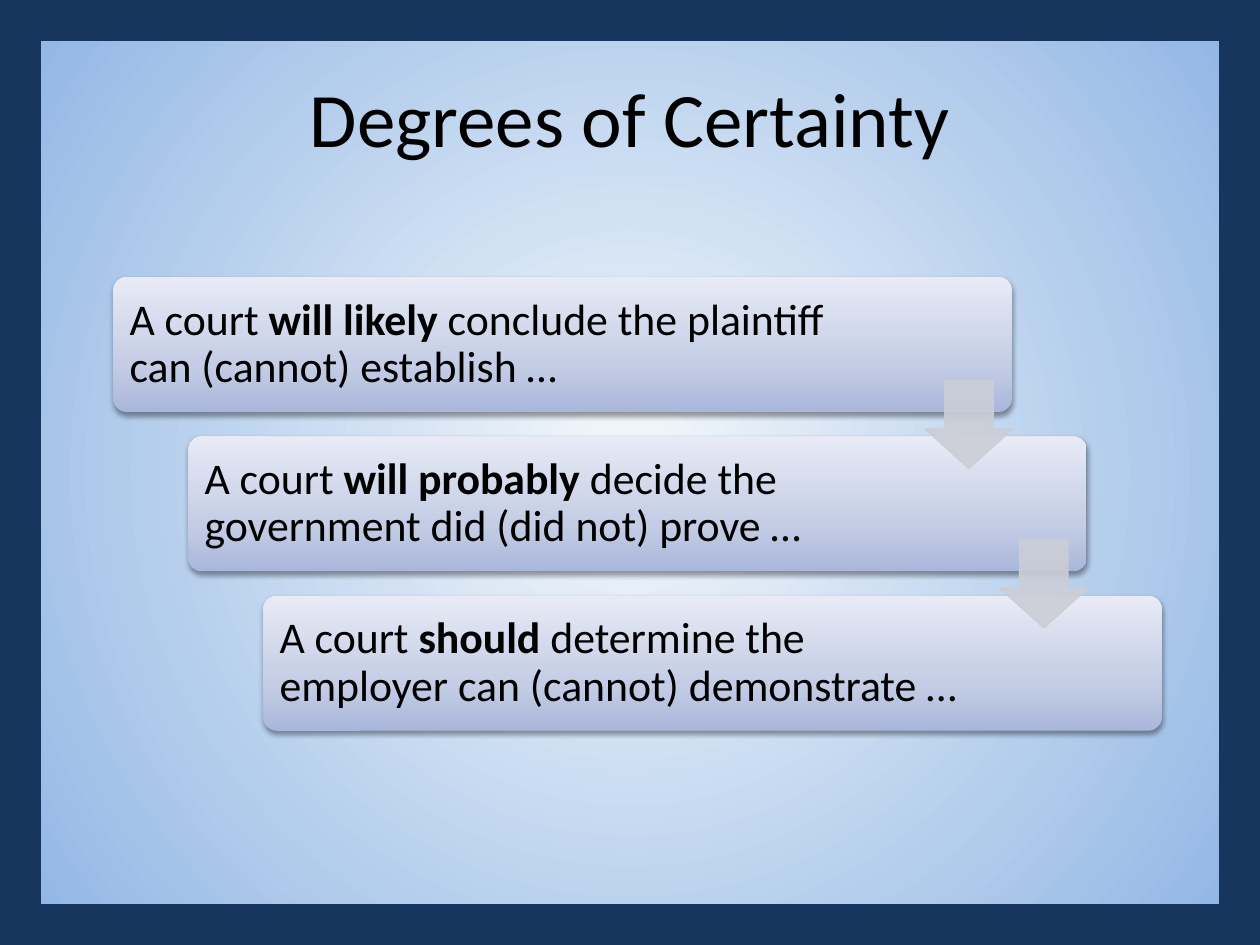
from lxml import etree
from pptx import Presentation
from pptx.dml.color import RGBColor
from pptx.enum import shapes, text
from pptx.oxml import parse_xml
from pptx.oxml.ns import qn, nsdecls
from pptx.util import Inches, Pt

TITLE = "Degrees of Certainty"
STEPS = [
    ("A court ", "will likely", " conclude the plaintiff can (cannot) establish …"),
    ("A court ", "will probably", " decide the government did (did not) prove …"),
    ("A court ", "should", " determine the employer can (cannot) demonstrate …"),
]
COLORS = {"frame": "17365D", "text": "000000", "arrow": "CBCED6", "shadow": "000000"}
BACKGROUND_STOPS = [(0, "F4F8FB"), (100, "8CB3E3")]
BOX_STOPS = [(0, "AAB7DB"), (35, "C4CDE5"), (100, "E8EBF6")]
RADIAL = '<a:path path="circle"><a:fillToRect l="50000" t="50000" r="50000" b="50000"/></a:path>'
UPWARD = '<a:lin ang="16200000" scaled="0"/>'
FONT = "Calibri"
LEFT, TOP, STEP_X, STEP_Y = 0.9, 2.2, 0.595, 1.265
BOX_W, BOX_H, TEXT_W, INSET = 7.13, 1.07, 5.78, 0.03
ARROW_X, ARROW_Y, ARROW_SIZE = 6.44, 0.82, 0.7


def rgb(name):
    return RGBColor.from_string(COLORS[name])


def set_gradient(fill, element, stops, direction):
    fill.gradient()
    old = next(element.iter(qn("a:gradFill")))
    gs = "".join(f'<a:gs pos="{pos * 1000}"><a:srgbClr val="{c}"/></a:gs>' for pos, c in stops)
    new = parse_xml(f'<a:gradFill {nsdecls("a")} rotWithShape="1">'
                    f'<a:gsLst>{gs}</a:gsLst>{direction}</a:gradFill>')
    old.getparent().replace(old, new)


def add_shape(s, kind, x, y, w, h):
    sp = s.shapes.add_shape(kind, Inches(x), Inches(y), Inches(w), Inches(h))
    sp.shadow.inherit = False
    return sp


def add_text(s, x, y, w, h, parts, size, margin):
    tf = s.shapes.add_textbox(Inches(x), Inches(y), Inches(w), Inches(h)).text_frame
    tf.word_wrap = True
    tf.vertical_anchor = text.MSO_ANCHOR.MIDDLE
    tf.margin_left = tf.margin_right = Inches(0.1)
    tf.margin_top = tf.margin_bottom = Inches(margin)
    p = tf.paragraphs[0]
    for i, part in enumerate(parts):
        r = p.add_run()
        r.text = part
        r.font.name, r.font.size, r.font.bold = FONT, Pt(size), i == 1
        r.font.color.rgb = rgb("text")
    return p


def add_box(s, x, y):
    sp = add_shape(s, shapes.MSO_SHAPE.ROUNDED_RECTANGLE, x, y, BOX_W, BOX_H)
    sp.adjustments[0] = 0.1
    sp.line.fill.background()
    set_gradient(sp.fill, sp.element, BOX_STOPS, UPWARD)
    effects = next(sp.element.iter(qn("a:effectLst")))
    shadow = etree.SubElement(effects, qn("a:outerShdw"), blurRad=str(Pt(3.1)),
                              dist=str(Pt(1.6)), dir="5400000", rotWithShape="0")
    color = etree.SubElement(shadow, qn("a:srgbClr"), val=COLORS["shadow"])
    etree.SubElement(color, qn("a:alpha"), val="38000")


def add_arrow(s, x, y):
    sp = add_shape(s, shapes.MSO_SHAPE.DOWN_ARROW, x, y, ARROW_SIZE, ARROW_SIZE)
    sp.adjustments[0], sp.adjustments[1] = 0.55, 0.45
    sp.fill.solid()
    sp.fill.fore_color.rgb = sp.line.color.rgb = rgb("arrow")
    sp.line.width = Pt(0.75)
    for color in sp.element.spPr.iter(qn("a:srgbClr")):
        etree.SubElement(color, qn("a:alpha"), val="90000")


def main():
    prs = Presentation()
    prs.slide_width, prs.slide_height = Inches(10), Inches(7.5)
    s = prs.slides.add_slide(prs.slide_layouts[6])
    set_gradient(s.background.fill, s.element, BACKGROUND_STOPS, RADIAL)

    frame = add_shape(s, shapes.MSO_SHAPE.RECTANGLE, 0, 0, 10, 7.5)
    frame.fill.background()
    frame.line.color.rgb = rgb("frame")
    frame.line.width = Pt(47)

    p = add_text(s, 0.5, 0.3, 9, 1.25, [TITLE], 44, 0.05)
    p.alignment = text.PP_ALIGN.CENTER

    places = [(LEFT + i * STEP_X, TOP + i * STEP_Y) for i in range(len(STEPS))]
    for (x, y), parts in zip(places, STEPS):
        add_box(s, x, y)
        p = add_text(s, x + INSET, y + INSET, TEXT_W, BOX_H - 2 * INSET, parts, 25, 0.1)
        p.line_spacing = 0.9
    for x, y in places[:-1]:
        add_arrow(s, x + ARROW_X, y + ARROW_Y)

    prs.save("out.pptx")


if __name__ == "__main__":
    main()
